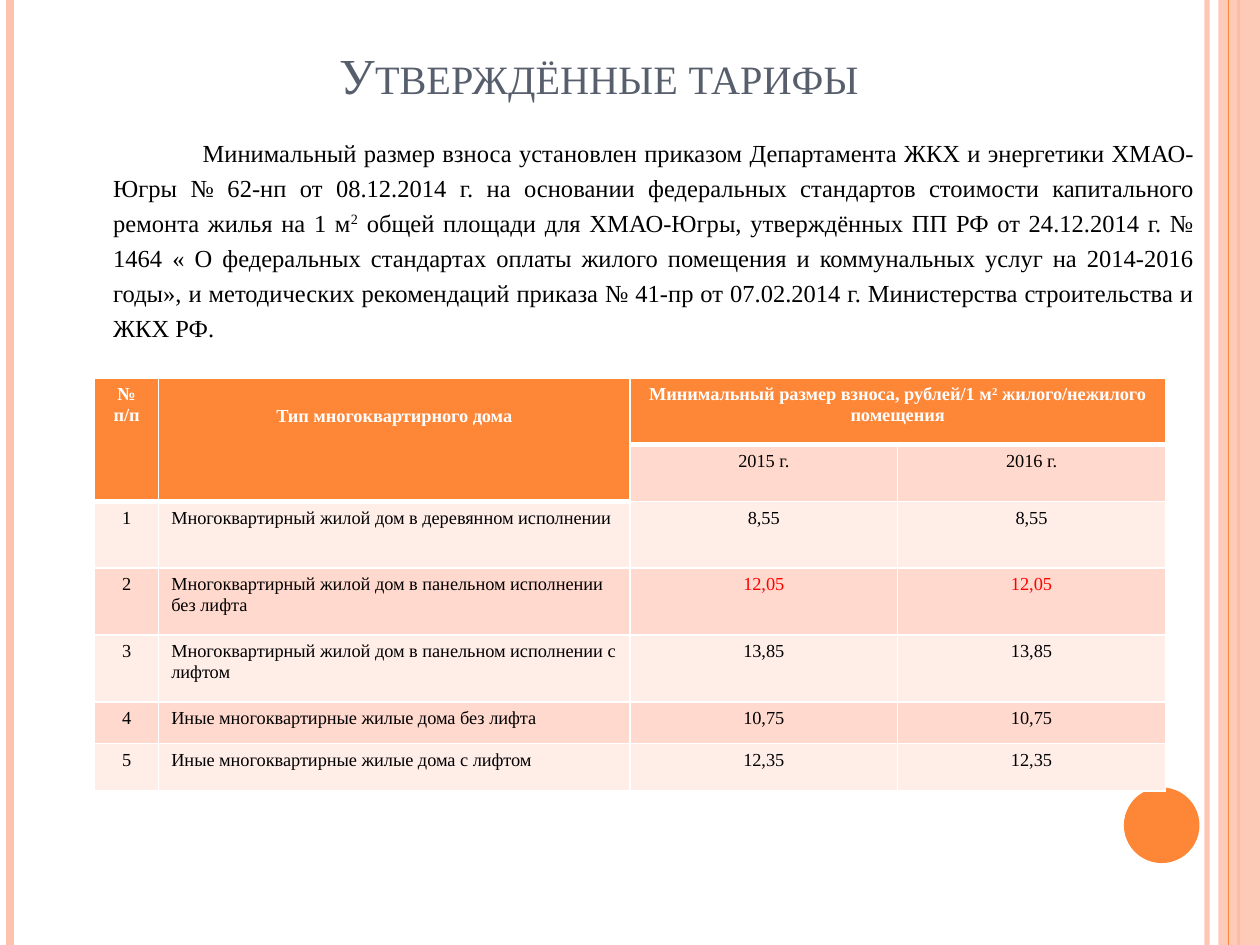
"""Build the slide with the approved tariffs and their table."""
from lxml.etree import SubElement
from pptx import Presentation
from pptx.dml.color import RGBColor
from pptx.enum.shapes import MSO_CONNECTOR, MSO_SHAPE
from pptx.enum.text import MSO_ANCHOR, PP_ALIGN
from pptx.oxml.ns import qn
from pptx.util import Inches, Pt

LINE = MSO_CONNECTOR.STRAIGHT
RECT, OVAL = MSO_SHAPE.RECTANGLE, MSO_SHAPE.OVAL
LEFT, MID, JUST = PP_ALIGN.LEFT, PP_ALIGN.CENTER, PP_ALIGN.JUSTIFY
BASE = MSO_ANCHOR.BOTTOM
FONT = "Times New Roman"
WHITE, BLACK, RED = "FFFFFF", "000000", "FF0000"
ORANGE, PEACH = "FE8637", "FEC3AE"
BANDS = ["FFEDE8", "FFD9CE"]


def hue(code):
    return RGBColor.from_string(code)


def style(para, size, code, bold=False):
    for run in para.runs:
        run.font.name = FONT
        run.font.size = Pt(size)
        run.font.bold = bold
        run.font.color.rgb = hue(code)


prs = Presentation()
prs.slide_width, prs.slide_height = Inches(10), Inches(7.5)
shapes = prs.slides.add_slide(prs.slide_layouts[6]).shapes

bars = [
    ("line", 9.58, 3, PEACH, 93),
    ("line", 0.08, 4.5, PEACH, 100),
    ("line", 9.83, 1.5, ORANGE, 100),
    ("band", 9.67, 0, PEACH, 87),
    ("line", 9.75, 0.75, ORANGE, 100),
]
for kind, x, width, code, alpha in bars:
    if kind == "band":
        bar = shapes.add_shape(RECT, Inches(x), 0, Inches(10 - x), Inches(7.5))
        bar.shadow.inherit = False
        bar.fill.solid()
        bar.fill.fore_color.rgb = hue(code)
        bar.line.fill.background()
    else:
        bar = shapes.add_connector(LINE, Inches(x), 0, Inches(x), Inches(7.5))
        bar.line.width = Pt(width)
        bar.line.color.rgb = hue(code)
        SubElement(bar._element.spPr, qn("a:effectLst"))
    if alpha < 100:
        color = bar._element.find(".//" + qn("a:srgbClr"))
        SubElement(color, qn("a:alpha"), val=str(alpha * 1000))

disc = shapes.add_shape(OVAL, Inches(8.92), Inches(6.25), Inches(0.6), Inches(0.6))
disc.shadow.inherit = False
disc.fill.solid()
disc.fill.fore_color.rgb = hue(ORANGE)
disc.line.fill.background()

title = shapes.add_textbox(Inches(0.67), Inches(0.41), Inches(8.17), Inches(0.47))
frame = title.text_frame
frame.word_wrap = True
frame.vertical_anchor = BASE
frame.text = "Утверждённые тарифы"
para = frame.paragraphs[0]
para.alignment = MID
style(para, 28.8, "575F6D")
para.runs[0]._r.get_or_add_rPr().set("cap", "small")

body = shapes.add_textbox(Inches(0.8), Inches(1), Inches(8.78), Inches(1.8))
body.text_frame.word_wrap = True
intro = body.text_frame.paragraphs[0]
intro.alignment = JUST
intro.line_spacing = Pt(20)
intro._p.get_or_add_pPr().set("indent", str(Inches(0.71)))

rows = [
    ["№ п/п", "Тип многоквартирного дома", "", ""],
    ["", "", "2015 г.", "2016 г."],
    ["1", "Многоквартирный жилой дом в деревянном исполнении", "8,55", "8,55"],
    ["2", "Многоквартирный жилой дом в панельном исполнении без лифта", "12,05", "12,05"],
    ["3", "Многоквартирный жилой дом в панельном исполнении с лифтом", "13,85", "13,85"],
    ["4", "Иные многоквартирные жилые дома без лифта", "10,75", "10,75"],
    ["5", "Иные многоквартирные жилые дома с лифтом", "12,35", "12,35"],
]
year = (8.5 - 0.51 - 3.74) / 2
wides = [0.51, 3.74, year, year]
highs = [0.53, 0.42, 0.53, 0.53, 0.53, 0.33, 0.38]
grid = shapes.add_table(len(rows), len(wides), Inches(0.75), Inches(3),
                        Inches(sum(wides)), Inches(sum(highs))).table
grid.first_row = grid.horz_banding = False
for col, wide in zip(grid.columns, wides):
    col.width = Inches(wide)
for row, high in zip(grid.rows, highs):
    row.height = Inches(high)
for col in (0, 1):
    grid.cell(0, col).merge(grid.cell(1, col))
grid.cell(0, 2).merge(grid.cell(0, 3))
grid.cell(0, 1).margin_top = Inches(0.22)

head = grid.cell(0, 2).text_frame.paragraphs[0]
parts = [
    (intro, "Минимальный размер взноса установлен приказом Департамента ЖКХ и энергетики "
            "ХМАО-Югры № 62-нп от 08.12.2014 г. на основании федеральных стандартов "
            "стоимости капитального ремонта жилья на 1 м",
     " общей площади для ХМАО-Югры, утверждённых ПП РФ от 24.12.2014 г. № 1464 "
     "« О федеральных стандартах оплаты жилого помещения и коммунальных услуг на "
     "2014-2016 годы», и методических рекомендаций приказа № 41-пр от 07.02.2014 г. "
     "Министерства строительства и ЖКХ РФ."),
    (head, "Минимальный размер взноса, рублей/1 м", " жилого/нежилого помещения"),
]
for para, start, end in parts:
    for text in (start, "2", end):
        para.add_run().text = text
    para.runs[1]._r.get_or_add_rPr().set("baseline", "30000")
style(intro, 14, BLACK)

for r, row in enumerate(rows):
    for c, text in enumerate(row):
        cell = grid.cell(r, c)
        top = r == 0 or (r == 1 and c < 2)
        if text:
            cell.text_frame.text = text
        para = cell.text_frame.paragraphs[0]
        para.alignment = LEFT if c == 1 and not top else MID
        code = WHITE if top else RED if text == "12,05" else BLACK
        style(para, 10.5, code, top)
        props = cell._tc.get_or_add_tcPr()
        for side in ("L", "R", "T", "B"):
            if side == "T" and r > 0:
                continue
            width = Pt(3 if side == "B" and top else 1)
            edge = SubElement(props, qn("a:ln" + side), w=str(width))
            SubElement(SubElement(edge, qn("a:solidFill")), qn("a:srgbClr"), val=WHITE)
        cell.fill.solid()
        cell.fill.fore_color.rgb = hue(ORANGE if top else BANDS[r % 2])

prs.save("out.pptx")
